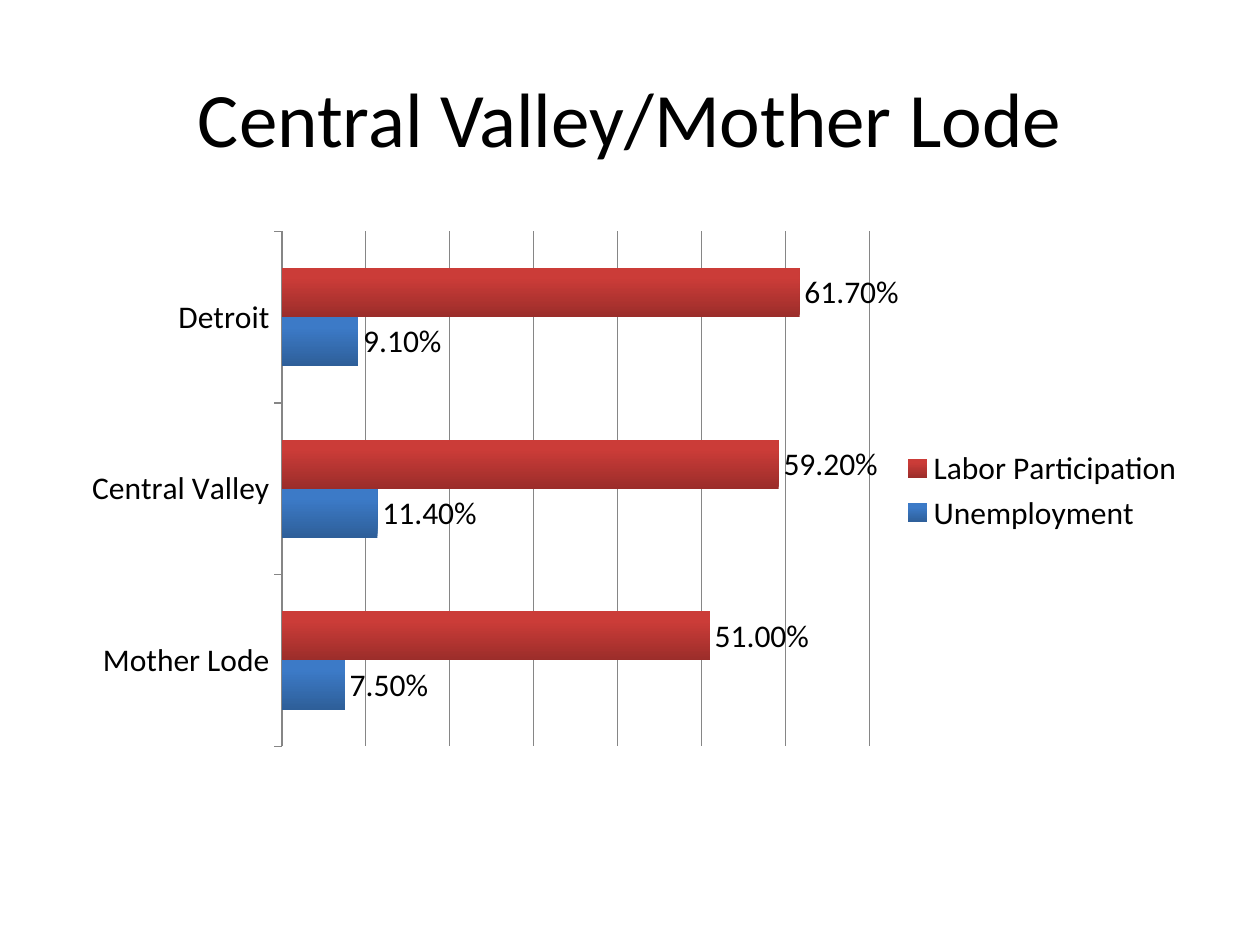
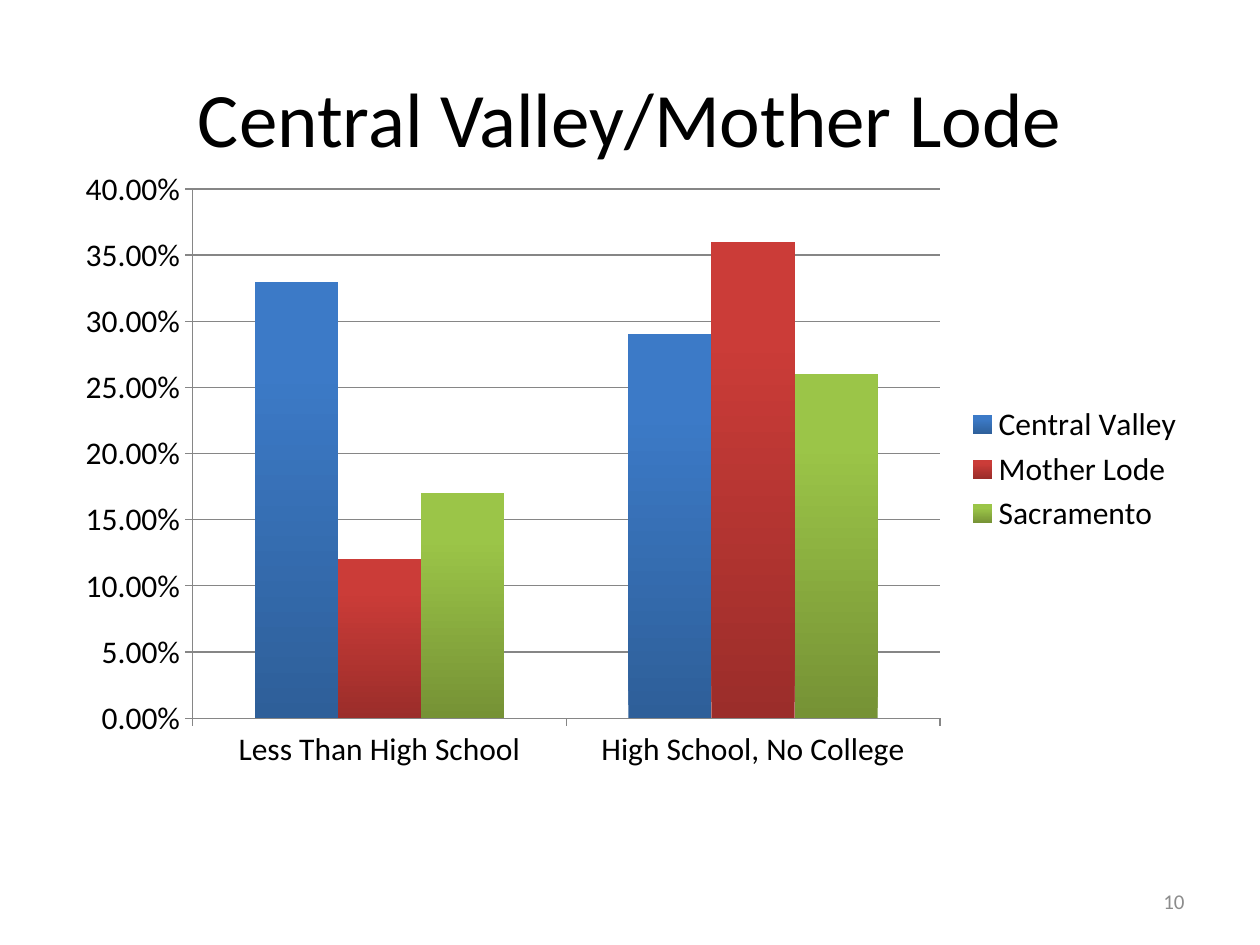
import pptx
import pptx.chart.data
import pptx.dml.color
import pptx.enum.chart
import pptx.enum.text
import pptx.util
from lxml import etree
from pptx.dml.color import RGBColor
from pptx.enum.chart import XL_CHART_TYPE, XL_LEGEND_POSITION, XL_TICK_MARK
from pptx.enum.text import MSO_ANCHOR, PP_ALIGN
from pptx.util import Inches

FONT = "Calibri"
BLACK = RGBColor(0x00, 0x00, 0x00)
PAGE_GRAY = RGBColor(0x8C, 0x8C, 0x8C)
LINE_GRAY = RGBColor(0x86, 0x86, 0x86)
BLUE = (RGBColor(0x2E, 0x5F, 0x99), RGBColor(0x3C, 0x7A, 0xC7))
RED = (RGBColor(0x9B, 0x2D, 0x2A), RGBColor(0xCB, 0x3C, 0x38))
GREEN = (RGBColor(0x76, 0x92, 0x35), RGBColor(0x9B, 0xC5, 0x48))
PERCENT = "0.00%"
CHART_NS = "http://schemas.openxmlformats.org/drawingml/2006/chart"


def add_text(page, text, *, left, top, width, height, size, color, align):
    box = page.shapes.add_textbox(Inches(left), Inches(top), Inches(width), Inches(height))
    frame = box.text_frame
    frame.word_wrap = True
    frame.vertical_anchor = MSO_ANCHOR.MIDDLE
    para = frame.paragraphs[0]
    para.alignment = align
    span = para.add_run()
    span.text = text
    span.font.name = FONT
    span.font.size = pptx.util.Pt(size)
    span.font.color.rgb = color


def add_chart(page, kind, top, categories, series_rows, maximum, step):
    data = pptx.chart.data.CategoryChartData(number_format=PERCENT)
    data.categories = categories
    for name, values, shades in series_rows:
        data.add_series(name, values)
    chart = page.shapes.add_chart(
        kind, Inches(0.5), Inches(top), Inches(9), Inches(4.95), data
    ).chart
    chart.has_title = False
    chart.font.name = FONT
    chart.font.size = pptx.util.Pt(18)
    chart.font.color.rgb = BLACK
    chart.has_legend = True
    chart.legend.position = XL_LEGEND_POSITION.RIGHT
    chart.legend.include_in_layout = False

    plot = chart.plots[0]
    plot.gap_width = 150
    plot.vary_by_categories = False
    for series, (name, values, shades) in zip(plot.series, series_rows):
        fill = series.format.fill
        fill.gradient()
        fill.gradient_angle = 90
        for stop, shade, position in zip(fill.gradient_stops, shades, (0, 0.8)):
            stop.color.rgb = shade
            stop.position = position

    for axis in (chart.category_axis, chart.value_axis):
        axis.major_tick_mark = XL_TICK_MARK.OUTSIDE
        axis.minor_tick_mark = XL_TICK_MARK.NONE
        axis.format.line.color.rgb = LINE_GRAY
    chart.category_axis.has_major_gridlines = False
    scale = chart.value_axis
    scale.minimum_scale = 0
    scale.maximum_scale = maximum
    scale.major_unit = step
    scale.has_major_gridlines = True
    scale.major_gridlines.format.line.color.rgb = LINE_GRAY
    scale.tick_labels.number_format = PERCENT
    scale.tick_labels.number_format_is_linked = False
    return chart


deck = pptx.Presentation()
deck.slide_width = Inches(10)
deck.slide_height = Inches(7.5)
pages = [deck.slides.add_slide(deck.slide_layouts[6]) for number in range(2)]
labor_page, education_page = pages
for page in pages:
    add_text(page, "Central Valley/Mother Lode", left=0.5, top=0.3, width=9, height=1.25,
             size=44, color=BLACK, align=PP_ALIGN.CENTER)

labor_chart = add_chart(
    labor_page, XL_CHART_TYPE.BAR_CLUSTERED, 1.42,
    ["Mother Lode", "Central Valley", "Detroit"],
    [("Unemployment", (0.075, 0.114, 0.091), BLUE),
     ("Labor Participation", (0.51, 0.592, 0.617), RED)],
    0.7, 0.1,
)
labor_chart.value_axis.visible = False
for series in labor_chart.plots[0].series:
    labels = series.data_labels
    labels.show_value = True
    labels.number_format = PERCENT
    labels.number_format_is_linked = False

plot_area = labor_chart.plots[0]._element.getparent()
for old_layout in plot_area.findall(f"{{{CHART_NS}}}layout"):
    plot_area.remove(old_layout)
layout = etree.Element(f"{{{CHART_NS}}}layout")
manual = etree.SubElement(layout, f"{{{CHART_NS}}}manualLayout")
for tag, value in (("layoutTarget", "inner"), ("xMode", "edge"), ("yMode", "edge"),
                   ("x", "0.193"), ("y", "0.084"), ("w", "0.518"), ("h", "0.826")):
    etree.SubElement(manual, f"{{{CHART_NS}}}{tag}", val=value)
plot_area.insert(0, layout)

add_chart(
    education_page, XL_CHART_TYPE.COLUMN_CLUSTERED, 1.25,
    ["Less Than High School", "High School, No College"],
    [("Central Valley", (0.33, 0.29), BLUE),
     ("Mother Lode", (0.12, 0.36), RED),
     ("Sacramento", (0.17, 0.26), GREEN)],
    0.4, 0.05,
)
add_text(education_page, "10", left=7.17, top=6.95, width=2.33, height=0.4,
         size=12, color=PAGE_GRAY, align=PP_ALIGN.RIGHT)

deck.save("out.pptx")
